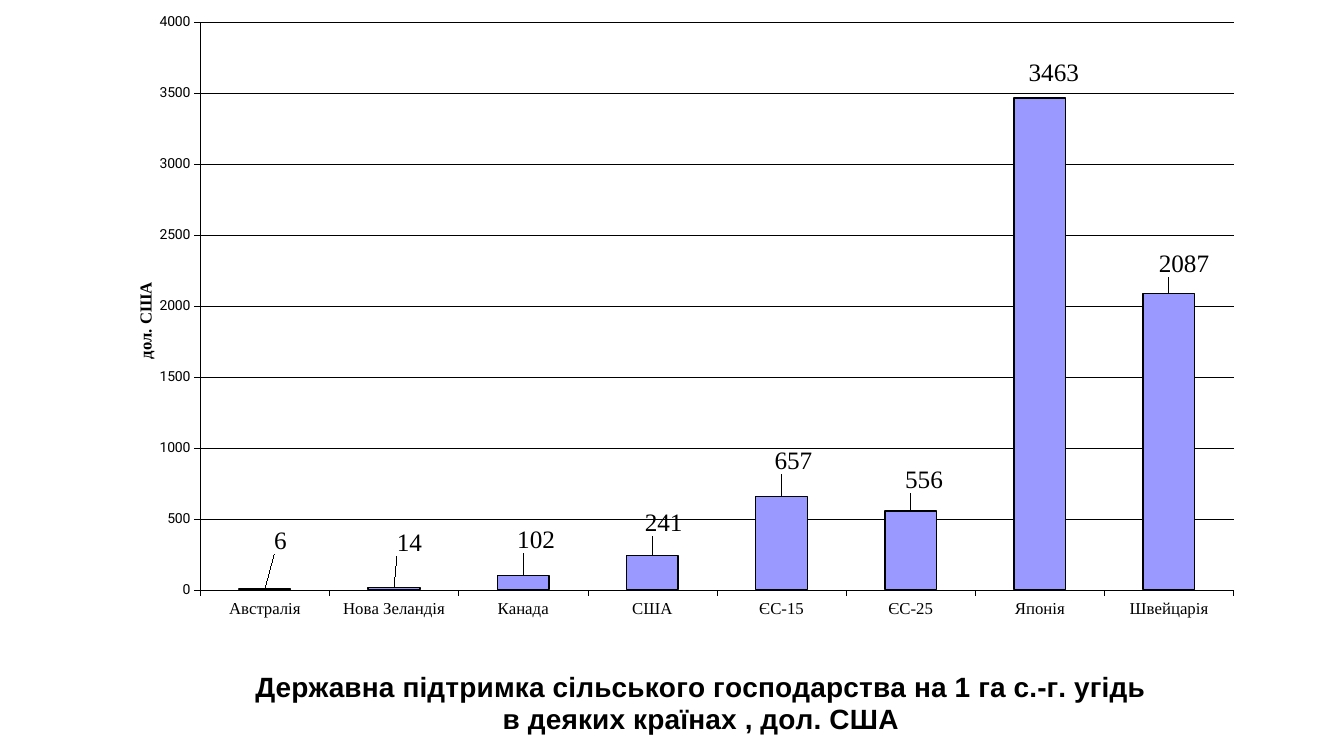
from lxml.etree import SubElement
from pptx import Presentation
from pptx.chart.data import CategoryChartData
from pptx.dml.color import RGBColor
from pptx.enum.chart import XL_CHART_TYPE, XL_LABEL_POSITION, XL_TICK_LABEL_POSITION, XL_TICK_MARK
from pptx.oxml import parse_xml
from pptx.oxml.ns import nsdecls, qn
from pptx.util import Inches, Pt

TITLE = "Державна підтримка сільського господарства на 1 га с.-г. угідь в деяких країнах , дол. США"
UNIT = "дол. США"
# country, support per hectare, label shift right and down as parts of the chart size
SUPPORT = [
    ("Австралія", 6, 0.0136, -0.042),
    ("Нова Зеландія", 14, 0.0136, -0.038),
    ("Канада", 102, 0.0114, -0.025),
    ("США", 241, 0.01, -0.021),
    ("ЄС-15", 657, 0.0105, -0.025),
    ("ЄС-25", 556, 0.0118, -0.018),
    ("Японія", 3463, 0.0123, -0.01),
    ("Швейцарія", 2087, 0.0132, -0.017),
]
CHART_BOX = (1.06, 0.14, 11.3, 7.24)
PLOT_BOX = {"x": 0.082, "y": 0.01, "w": 0.907, "h": 0.783}
TITLE_SPOT = {"x": 0.126, "y": 0.896}
UNIT_SPOT = {"x": 0.022, "y": 0.365}
THEME = {
    "ink": RGBColor(0, 0, 0),
    "bar": RGBColor(0x99, 0x99, 0xFF),
    "title": ("Arial", 20, True),
    "unit": ("Times New Roman", 12, True),
    "countries": ("Times New Roman", 12, False),
    "scale": ("Roboto", 10, False),
    "values": ("Times New Roman", 18, False),
}


def style_font(font, role):
    font.name, size, font.bold = THEME[role]
    font.size = Pt(size)
    font.color.rgb = THEME["ink"]


def style_line(line, width):
    line.color.rgb = THEME["ink"]
    line.width = Pt(width)


def set_layout(parent, places, modes=(), after=None):
    """Give a chart element a manual layout, put first or after the named child."""
    for old in parent.findall(qn("c:layout")):
        parent.remove(old)
    layout = parse_xml(f"<c:layout {nsdecls('c')}><c:manualLayout/></c:layout>")
    for name, value in [*modes, *places.items()]:
        SubElement(layout[0], qn(f"c:{name}")).set("val", str(value))
    if after:
        parent.find(qn(after)).addnext(layout)
    else:
        parent.insert(0, layout)


def write_title(title, text, role):
    title.text_frame.text = text
    style_font(title.text_frame.paragraphs[0].runs[0].font, role)


def style_axes(chart):
    for axis, role in ((chart.category_axis, "countries"), (chart.value_axis, "scale")):
        axis.major_tick_mark = XL_TICK_MARK.OUTSIDE
        axis.minor_tick_mark = XL_TICK_MARK.NONE
        style_font(axis.tick_labels.font, role)
        style_line(axis.format.line, 0.25)
    chart.category_axis.tick_label_position = XL_TICK_LABEL_POSITION.LOW
    chart.category_axis.has_major_gridlines = False
    scale = chart.value_axis
    scale.minimum_scale, scale.maximum_scale, scale.major_unit = 0, 4000, 500
    scale.has_major_gridlines = True
    style_line(scale.major_gridlines.format.line, 0.25)
    write_title(scale.axis_title, UNIT, "unit")


def style_bars(plot):
    plot.gap_width = 150
    plot.vary_by_categories = False
    bars = plot.series[0]
    bars.format.fill.solid()
    bars.format.fill.fore_color.rgb = THEME["bar"]
    style_line(bars.format.line, 1)
    labels = bars.data_labels
    labels.show_value = True
    labels.position = XL_LABEL_POSITION.OUTSIDE_END
    style_font(labels.font, "values")
    for index in range(len(SUPPORT)):
        label = bars.points[index].data_label
        style_font(label.font, "values")
        label.position = XL_LABEL_POSITION.OUTSIDE_END


def place_elements(chart):
    root = chart._chartSpace
    edges = [("xMode", "edge"), ("yMode", "edge")]
    set_layout(root.xpath(".//c:plotArea")[0], PLOT_BOX, [("layoutTarget", "inner"), *edges])
    set_layout(root.xpath("./c:chart/c:title")[0], TITLE_SPOT, edges, "c:tx")
    unit = root.xpath(".//c:valAx/c:title")[0]
    set_layout(unit, UNIT_SPOT, edges, "c:tx")
    turned = unit.xpath(".//a:bodyPr")[0]
    turned.set("rot", "-5400000")
    turned.set("vert", "horz")
    for label, (_, _, right, down) in zip(root.xpath(".//c:dLbl"), SUPPORT):
        set_layout(label, {"x": right, "y": down}, after="c:idx")


def main():
    deck = Presentation()
    deck.slide_width, deck.slide_height = Inches(13.33), Inches(7.5)
    page = deck.slides.add_slide(deck.slide_layouts[6])
    data = CategoryChartData()
    data.categories = [row[0] for row in SUPPORT]
    data.add_series("Series 1", [row[1] for row in SUPPORT])
    box = [Inches(length) for length in CHART_BOX]
    chart = page.shapes.add_chart(XL_CHART_TYPE.COLUMN_CLUSTERED, *box, data).chart
    style_font(chart.font, "scale")
    chart.has_legend = False
    write_title(chart.chart_title, TITLE, "title")
    chart.chart_title.include_in_layout = False
    style_axes(chart)
    style_bars(chart.plots[0])
    place_elements(chart)
    deck.save("out.pptx")


if __name__ == "__main__":
    main()
